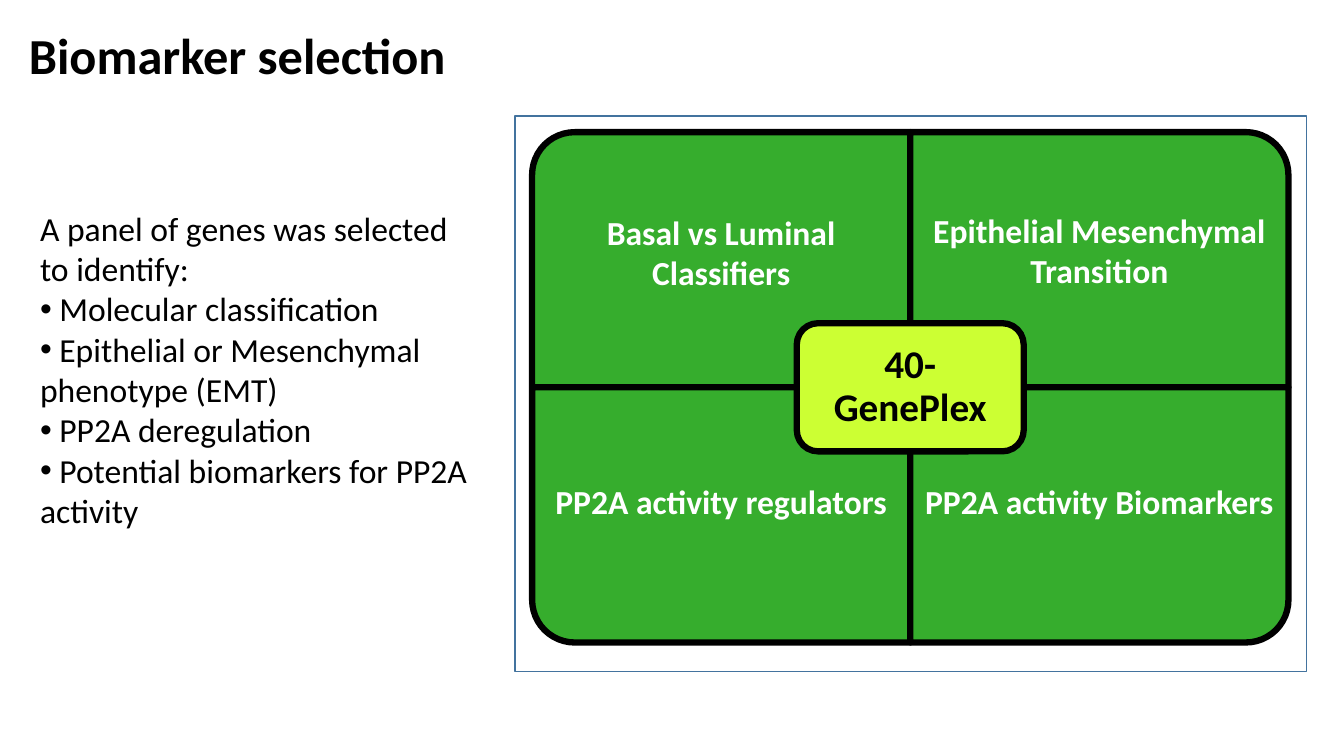
from lxml import etree
from pptx import Presentation
from pptx.dml.color import RGBColor
from pptx.enum import shapes, text
from pptx.oxml import ns
from pptx.util import Cm, Pt

COLORS = {"white": "FFFFFF", "black": "000000", "green": "36AD2D",
          "lime": "CCFF33", "frame": "43739E"}


def add_box(kind, left, top, width, height, fill, line, line_width):
    shape = slide.shapes.add_shape(kind, Cm(left), Cm(top), Cm(width), Cm(height))
    shape.shadow.inherit = False
    shape.fill.solid()
    shape.fill.fore_color.rgb = RGBColor.from_string(COLORS[fill])
    shape.line.color.rgb = RGBColor.from_string(COLORS[line])
    shape.line.width = Pt(line_width)
    return shape


def style(paragraph, size, color="black", bold=False, align=text.PP_ALIGN.LEFT):
    paragraph.alignment = align
    paragraph.font.name = "Calibri"
    paragraph.font.size = Pt(size)
    paragraph.font.bold = bold
    paragraph.font.color.rgb = RGBColor.from_string(COLORS[color])


presentation = Presentation()
presentation.slide_width, presentation.slide_height = Cm(33.87), Cm(19.05)
slide = presentation.slides.add_slide(presentation.slide_layouts[6])

# Title
title = slide.shapes.add_textbox(Cm(0.48), Cm(0.48), Cm(11.13), Cm(1.8)).text_frame
title.word_wrap = False
title.text = "Biomarker selection"
style(title.paragraphs[0], 36, bold=True)

# Introduction and bullets
body = slide.shapes.add_textbox(Cm(0.76), Cm(5.11), Cm(11.68), Cm(8.46)).text_frame
body.word_wrap = True
body.text = "A panel of genes was selected to identify:"
style(body.paragraphs[0], 24)
for item in ("Molecular classification", "Epithelial or Mesenchymal phenotype (EMT)",
             "PP2A deregulation", "Potential biomarkers for PP2A activity"):
    paragraph = body.add_paragraph()
    paragraph.text = " " + item
    style(paragraph, 24)
    properties = paragraph._p.get_or_add_pPr()
    etree.SubElement(properties, ns.qn("a:buFont")).set("typeface", "Arial")
    etree.SubElement(properties, ns.qn("a:buChar")).set("char", "•")

# Matrix: four quadrants around a common centre, each with its outer corner rounded
add_box(shapes.MSO_SHAPE.RECTANGLE, 12.98, 2.92, 19.94, 14, "white", "frame", 1)
center_x, center_y = 22.94, 9.76
quadrant_width, quadrant_height = 9.53, 6.43
label_height = 2.6
quadrants = [  # column side, row side, rotation, label centre, label
    (-1, -1, 270, 6.35, "Basal vs Luminal Classifiers"),
    (1, -1, 0, 6.3, "Epithelial Mesenchymal Transition"),
    (-1, 1, 180, 12.62, "PP2A activity regulators"),
    (1, 1, 90, 12.62, "PP2A activity Biomarkers"),
]
for column, row, rotation, label_y, label in quadrants:
    middle_x = center_x + column * quadrant_width / 2
    middle_y = center_y + row * quadrant_height / 2
    width, height = quadrant_width, quadrant_height
    if rotation in (90, 270):
        width, height = height, width
    quadrant = add_box(shapes.MSO_SHAPE.ROUND_1_RECTANGLE, middle_x - width / 2,
                       middle_y - height / 2, width, height, "green", "black", 4.5)
    quadrant.rotation = rotation
    frame = slide.shapes.add_textbox(
        Cm(middle_x - quadrant_width / 2), Cm(label_y - label_height / 2),
        Cm(quadrant_width), Cm(label_height)).text_frame
    frame.word_wrap = True
    frame.vertical_anchor = text.MSO_ANCHOR.MIDDLE
    frame.text = label
    style(frame.paragraphs[0], 24, "white", True, text.PP_ALIGN.CENTER)

# Centre badge
badge_width, badge_height = 5.72, 3.23
badge = add_box(shapes.MSO_SHAPE.ROUNDED_RECTANGLE, center_x - badge_width / 2,
                center_y - badge_height / 2, badge_width, badge_height,
                "lime", "black", 4.5)
frame = badge.text_frame
frame.margin_left = frame.margin_right = Cm(0.4)
frame.word_wrap = True
frame.vertical_anchor = text.MSO_ANCHOR.MIDDLE
frame.text = "40-GenePlex"
frame.paragraphs[0].line_spacing = 0.9
style(frame.paragraphs[0], 28, bold=True, align=text.PP_ALIGN.CENTER)

presentation.save("out.pptx")
